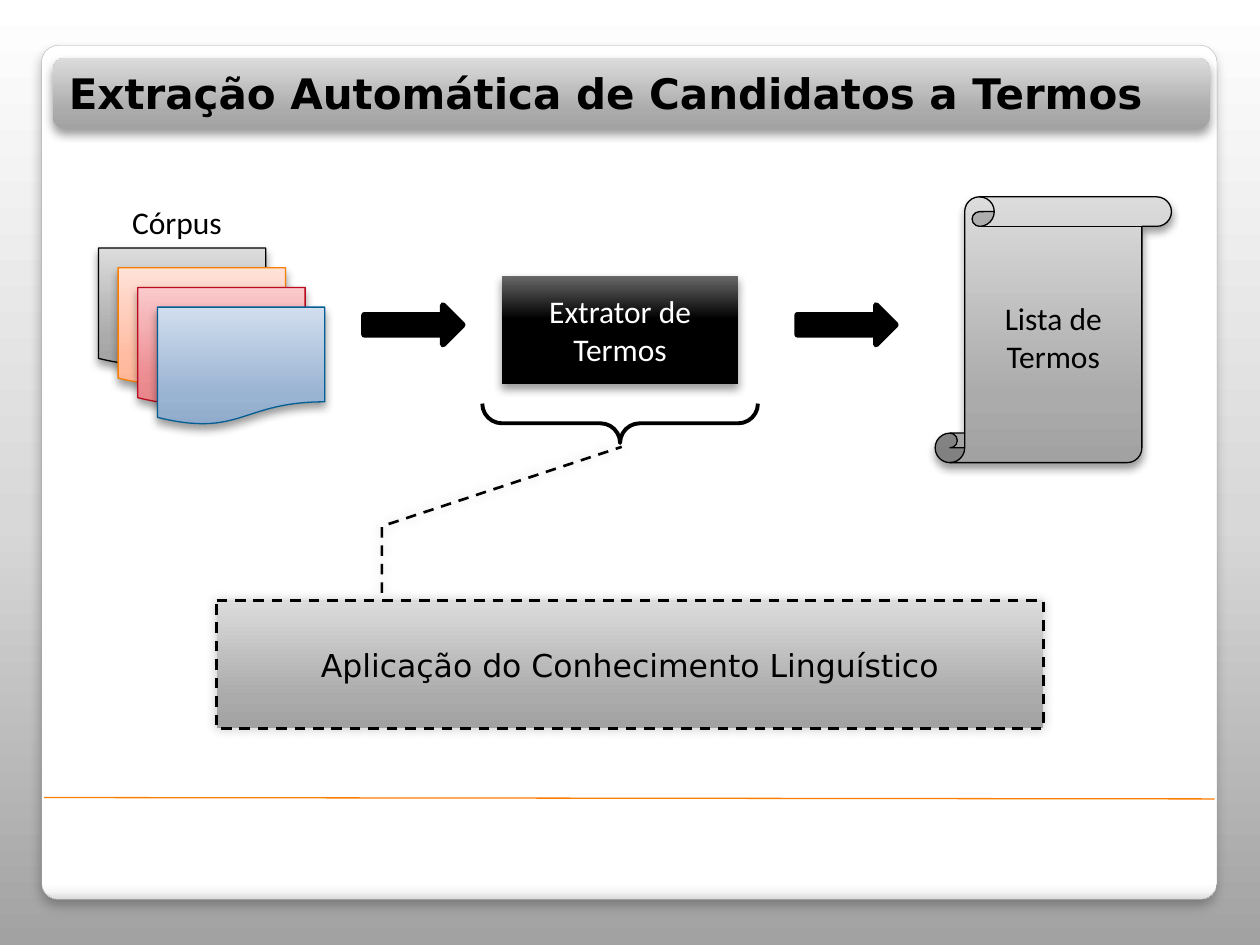
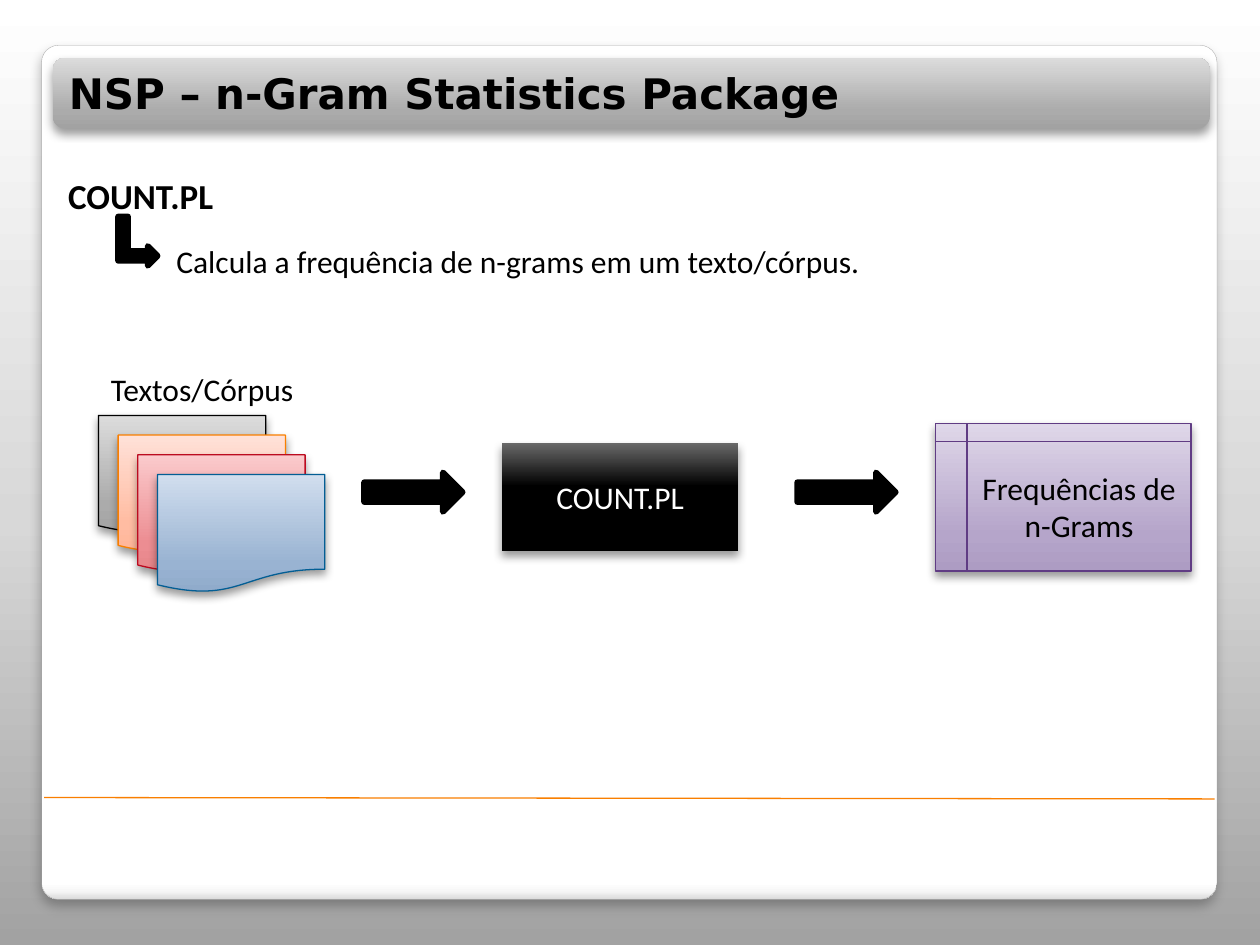
from dataclasses import dataclass

from lxml.etree import SubElement
from pptx import Presentation
from pptx.dml.color import RGBColor
from pptx.enum.dml import MSO_LINE
from pptx.enum.shapes import MSO_CONNECTOR, MSO_SHAPE
from pptx.enum.text import MSO_ANCHOR, PP_ALIGN
from pptx.oxml.ns import qn
from pptx.util import Inches, Pt

COLUMNS, ROWS = 64, 48
SLIDE_WIDTH, SLIDE_HEIGHT = Inches(10), Inches(7.5)
BODY_FONT, TITLE_FONT = "Calibri", "DejaVu Sans"

COLORS = {
    "black": "000000",
    "white": "FFFFFF",
    "orange": "F97F00",
    "red": "BC0B1F",
    "blue": "035E94",
    "purple": "603C84",
    "panel_edge": "A4A4A4",
}


def soft_gradient(dark, middle, light):
    return [(0, dark), (25, middle), (100, light)]


GRADIENTS = {
    "background": [(0, "A2A2A2"), (45, "D8D8D8"), (100, "FFFFFF")],
    "panel": [(0, "FFFFFF"), (98, "FFFFFF"), (99, "F7F7F7"), (100, "DADADA")],
    "black": [(0, "000000"), (60, "000000"), (100, "696969")],
    "gray": soft_gradient("A2A2A2", "ABABAB", "DCDCDC"),
    "orange": soft_gradient("FFB598", "FFBCA2", "FFE1D8"),
    "red": soft_gradient("E68589", "EC8D92", "FBCACC"),
    "blue": soft_gradient("90ABCB", "99B3D2", "D1DEEE"),
    "purple": soft_gradient("AD9CC3", "B5A5CA", "DFD7E9"),
}

# opacity in percent, blur and distance in points, direction in degrees
RAISED = (40, 5.2, 3, 90)
PANEL_SHADOW = (25, 6, 4, 90)
CALLOUT_SHADOW = (20, 6, 0, 315)

# (gradient, outline) of the stacked pages, back to front
PAGES = [("gray", "black"), ("orange", "orange"), ("red", "red"), ("blue", "blue")]


@dataclass
class Box:
    """A region of the slide, measured in grid columns and rows."""
    column: float
    row: float
    width: float
    height: float

    def inner(self, column, row, width, height):
        return Box(self.column + column, self.row + row, width, height)

    def lengths(self):
        across, down = SLIDE_WIDTH / COLUMNS, SLIDE_HEIGHT / ROWS
        return [round(n * size) for n, size in (
            (self.column, across), (self.row, down),
            (self.width, across), (self.height, down))]


PAGE = Box(0, 0, COLUMNS, ROWS)


def rgb(name):
    return RGBColor.from_string(COLORS[name])


def paint_gradient(fill, element, name, angle=270):
    """Give a fill any number of stops; the angle runs clockwise."""
    fill.gradient()
    gradient = next(element.iter(qn("a:gradFill")))
    stops = gradient.find(qn("a:gsLst"))
    stops.clear()
    for position, color in GRADIENTS[name]:
        stop = SubElement(stops, qn("a:gs"), pos=str(position * 1000))
        SubElement(stop, qn("a:srgbClr"), val=color)
    gradient.find(qn("a:lin")).set("ang", str(angle * 60000))


def cast_shadow(shape, opacity, blur, distance, direction):
    effects = shape.element.spPr.find(qn("a:effectLst"))
    shadow = SubElement(effects, qn("a:outerShdw"), blurRad=str(Pt(blur)),
                        dist=str(Pt(distance)), dir=str(direction * 60000),
                        algn="ctr", rotWithShape="0")
    color = SubElement(shadow, qn("a:srgbClr"), val=COLORS["black"])
    SubElement(color, qn("a:alpha"), val=str(opacity * 1000))


def draw_shape(shapes, kind, box, gradient=None, solid=None, line=None,
               line_width=0.75, shadow=None, angle=270, adjustments=()):
    shape = shapes.add_shape(kind, *box.lengths())
    for index, value in enumerate(adjustments):
        shape.adjustments[index] = value
    if gradient:
        paint_gradient(shape.fill, shape.element.spPr, gradient, angle)
    elif solid:
        shape.fill.solid()
        shape.fill.fore_color.rgb = rgb(solid)
    else:
        shape.fill.background()
    if line:
        shape.line.color.rgb = rgb(line)
        shape.line.width = Pt(line_width)
    else:
        shape.line.fill.background()
    shape.shadow.inherit = False
    if shadow:
        cast_shadow(shape, *shadow)
    return shape


def write(shape, lines, size=18, font=BODY_FONT, color="black", bold=False,
          align=PP_ALIGN.CENTER, anchor=MSO_ANCHOR.MIDDLE, spacing=None):
    frame = shape.text_frame
    frame.word_wrap = True
    frame.vertical_anchor = anchor
    for index, line in enumerate(lines):
        paragraph = frame.add_paragraph() if index else frame.paragraphs[0]
        paragraph.alignment = align
        paragraph.line_spacing = spacing
        run = paragraph.add_run()
        run.text = line
        run.font.name, run.font.size = font, Pt(size)
        run.font.bold = bold
        run.font.color.rgb = rgb(color)


def draw_label(shapes, box, text, indent=0.1, **style):
    label = shapes.add_textbox(*box.lengths())
    label.text_frame.margin_left = Inches(indent)
    write(label, [text], align=PP_ALIGN.LEFT, anchor=MSO_ANCHOR.TOP, **style)


def draw_frame(slide, box, title):
    """Background, white panel, footer rule and title band."""
    paint_gradient(slide.background.fill, slide.element, "background")
    draw_shape(slide.shapes, MSO_SHAPE.ROUNDED_RECTANGLE,
               box.inner(2.11, 2.3, 59.71, 43.39), gradient="panel", angle=90,
               line="panel_edge", line_width=0.16, shadow=PANEL_SHADOW,
               adjustments=[0.02])
    left, top, width, height = box.inner(2.24, 40.51, 59.46, 0.07).lengths()
    rule = slide.shapes.add_connector(MSO_CONNECTOR.STRAIGHT, left, top,
                                      left + width, top + height)
    rule.line.color.rgb = rgb("orange")
    rule.line.width = Pt(0.75)
    SubElement(rule.element.spPr, qn("a:effectLst"))
    band = draw_shape(slide.shapes, MSO_SHAPE.ROUNDED_RECTANGLE,
                      box.inner(2.69, 2.94, 58.75, 3.58), gradient="gray",
                      shadow=RAISED)
    write(band, [title], size=24, font=TITLE_FONT, bold=True, align=PP_ALIGN.LEFT)


def draw_corpus(slide, box, label, label_column):
    """A stack of pages, each one grid step further, under a label."""
    group = slide.shapes.add_group_shape()
    for step, (gradient, line) in enumerate(PAGES):
        draw_shape(group.shapes, MSO_SHAPE.FLOWCHART_DOCUMENT,
                   box.inner(step, 2.6 + step, 8.5, 6),
                   gradient=gradient, line=line, shadow=RAISED)
    draw_label(group.shapes, box.inner(label_column, 0, 12, 2.5), label)


def draw_flow(slide, box, corpus, label_column, process, result_kind,
              result_box, result_color, result_line, result):
    """Corpus, arrow, process, arrow, result, from left to right."""
    draw_corpus(slide, box, corpus, label_column)
    processor = draw_shape(slide.shapes, MSO_SHAPE.RECTANGLE,
                           box.inner(20.5, 4, 12, 5.5), gradient="black",
                           shadow=RAISED)
    write(processor, process, color="white")
    for column in (13.5, 35.5):
        draw_shape(slide.shapes, MSO_SHAPE.RIGHT_ARROW,
                   box.inner(column, 5.5, 5, 2), solid="black", line="black",
                   line_width=3.35)
    output = draw_shape(slide.shapes, result_kind, box.inner(*result_box),
                        gradient=result_color, line=result_line, shadow=RAISED)
    write(output, result)


def draw_knowledge_callout(slide, box):
    brace = draw_shape(slide.shapes, MSO_SHAPE.LEFT_BRACE,
                       box.inner(19.5, 0, 2, 14), line="black", line_width=2.25,
                       adjustments=[0.5, 0.5])
    brace.rotation = 270
    callout = draw_shape(slide.shapes, MSO_SHAPE.LINE_CALLOUT_2,
                         box.inner(0, 16, 42, 6.5), gradient="gray",
                         line="black", line_width=1.5, shadow=CALLOUT_SHADOW,
                         adjustments=[-0.06, 0.2, -0.58, 0.2, -1.2, 0.49])
    callout.line.dash_style = MSO_LINE.DASH
    write(callout, ["Aplicação do Conhecimento Linguístico"], font=TITLE_FONT)


def draw_command(slide, box, name, purpose):
    draw_label(slide.shapes, box.inner(0, 0, 10.25, 3.9), name, indent=0.15,
               size=20, bold=True, spacing=1.5)
    draw_label(slide.shapes, box.inner(5.5, 3.5, 38, 3.6), purpose, indent=0.15,
               spacing=1.5)
    arrow = draw_shape(slide.shapes, MSO_SHAPE.BENT_UP_ARROW,
                       box.inner(3.25, 3.75, 2.5, 2), solid="black",
                       line="black", line_width=3.35)
    arrow.rotation = 90


def build_extraction_slide(slide):
    draw_frame(slide, PAGE, "Extração Automática de Candidatos a Termos")
    draw_flow(slide, PAGE.inner(5, 10, 54.5, 13.5), "Córpus", 1.08,
              ["Extrator de", "Termos"], MSO_SHAPE.VERTICAL_SCROLL,
              (42.5, 0, 12, 13.5), "gray", "black", ["Lista de", "Termos"])
    draw_knowledge_callout(slide, PAGE.inner(11, 14.5, 42, 22.5))


def build_count_slide(slide):
    draw_frame(slide, PAGE, "NSP – n-Gram Statistics Package")
    draw_command(slide, PAGE.inner(2.5, 7.5, 43.5, 7.1), "COUNT.PL",
                 "Calcula a frequência de n-grams em um texto/córpus.")
    draw_flow(slide, PAGE.inner(5, 18.5, 55.5, 13.5), "Textos/Córpus", 0,
              ["COUNT.PL"], MSO_SHAPE.FLOWCHART_INTERNAL_STORAGE,
              (42.5, 3, 13, 7.5), "purple", "purple", ["Frequências de n-Grams"])


def main():
    presentation = Presentation()
    presentation.slide_width, presentation.slide_height = SLIDE_WIDTH, SLIDE_HEIGHT
    blank = presentation.slide_layouts[6]
    for build in (build_extraction_slide, build_count_slide):
        build(presentation.slides.add_slide(blank))
    presentation.save("out.pptx")


if __name__ == "__main__":
    main()
